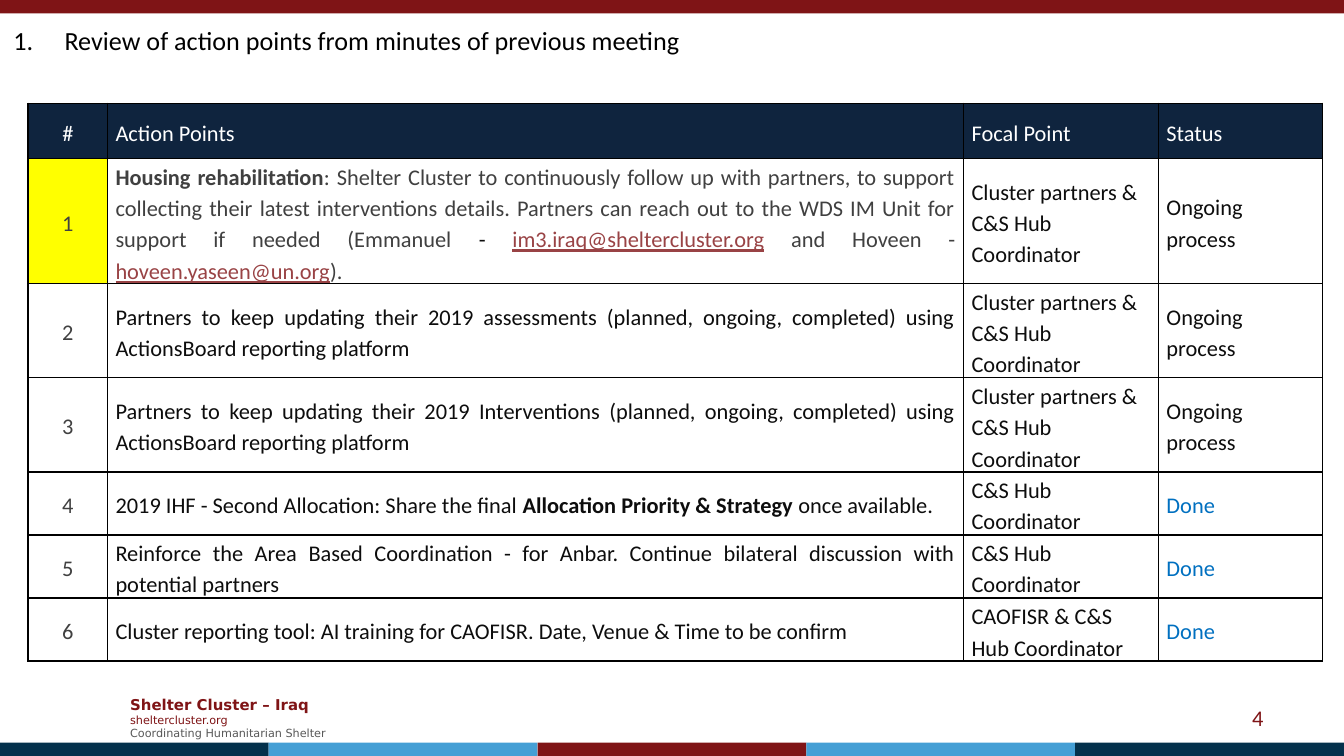
from typing import NamedTuple

from lxml import etree
from pptx import Presentation
from pptx.dml.color import RGBColor
from pptx.enum.shapes import MSO_SHAPE
from pptx.enum.text import MSO_ANCHOR, PP_ALIGN
from pptx.oxml.ns import qn
from pptx.util import Inches, Pt

RECT = MSO_SHAPE.RECTANGLE
MIDDLE = MSO_ANCHOR.MIDDLE
LEFT, CENTER, RIGHT, JUSTIFY = PP_ALIGN.LEFT, PP_ALIGN.CENTER, PP_ALIGN.RIGHT, PP_ALIGN.JUSTIFY

W = 10
H = W * 9 / 16
BAND_H = 0.1
BODY, SANS = "Calibri", "DejaVu Sans"
COLORS = {
    "red": "7F1416", "navy": "04314C", "sky": "459FD5", "header": "0F243E",
    "yellow": "FFFF00", "link": "994345", "done": "0070C0", "white": "FFFFFF",
    "black": "000000", "ink": "0D0D0D", "gray": "404040", "tagline": "595959",
}
COLUMN_WIDTHS = [0.59, 6.37, 1.45, 1.22]
ROW_HEIGHTS = [0.41, 0.93, 0.7, 0.7, 0.47, 0.47, 0.47]


class Span(NamedTuple):
    text: str
    color: str = "ink"
    bold: bool = False
    underline: bool = False


class Action(NamedTuple):
    points: list[Span]
    focal: str
    status: Span


PARTNERS = "Cluster partners & C&S Hub Coordinator"
HUB = "C&S Hub Coordinator"
ONGOING = Span("Ongoing process")
DONE = Span("Done", "done")
UPDATE = ("Partners to keep updating their 2019 {} (planned, ongoing, completed) "
          "using ActionsBoard reporting platform")

ACTIONS = [
    Action([
        Span("Housing rehabilitation", "gray", bold=True),
        Span(": Shelter Cluster to continuously follow up with partners, to support "
             "collecting their latest interventions details. Partners can reach out to "
             "the WDS IM Unit for support if needed (Emmanuel ", "gray"),
        Span("- "),
        Span("im3.iraq@sheltercluster.org", "link", underline=True),
        Span(" and Hoveen - ", "gray"),
        Span("hoveen.yaseen@un.org", "link", underline=True),
        Span(").", "gray"),
    ], PARTNERS, ONGOING),
    Action([Span(UPDATE.format("assessments"))], PARTNERS, ONGOING),
    Action([Span(UPDATE.format("Interventions"))], PARTNERS, ONGOING),
    Action([
        Span("2019 IHF - Second Allocation: Share the final "),
        Span("Allocation Priority & Strategy", bold=True),
        Span(" once available."),
    ], HUB, DONE),
    Action([Span("Reinforce the Area Based Coordination - for Anbar. Continue bilateral "
                 "discussion with potential partners")], HUB, DONE),
    Action([Span("Cluster reporting tool: AI training for CAOFISR. Date, Venue & Time "
                 "to be confirm")], "CAOFISR & C&S Hub Coordinator", DONE),
]


def rgb(name: str) -> RGBColor:
    return RGBColor.from_string(COLORS[name])


def add_spans(p, spans: list[Span], size: float, font: str = BODY) -> None:
    for span in spans:
        r = p.add_run()
        r.text = span.text
        r.font.name, r.font.size = font, Pt(size)
        r.font.bold, r.font.underline = span.bold, span.underline
        r.font.color.rgb = rgb(span.color)


def add_band(slide, x: float, y: float, w: float, color: str) -> None:
    sp = slide.shapes.add_shape(RECT, Inches(x), Inches(y), Inches(w), Inches(BAND_H))
    sp.shadow.inherit = False
    sp.fill.solid()
    sp.fill.fore_color.rgb = rgb(color)
    sp.line.fill.background()


def add_text_frame(slide, x: float, y: float, w: float, h: float):
    tf = slide.shapes.add_textbox(Inches(x), Inches(y), Inches(w), Inches(h)).text_frame
    tf.word_wrap = True
    tf.vertical_anchor = MIDDLE
    return tf


def number_paragraph(p, indent: float) -> None:
    """Give the paragraph an automatic number with a hanging indent."""
    pPr = p._p.get_or_add_pPr()
    pPr.set("marL", str(Inches(indent)))
    pPr.set("indent", str(-Inches(indent)))
    etree.SubElement(pPr, qn("a:buFont"), typeface="+mj-lt")
    etree.SubElement(pPr, qn("a:buAutoNum"), type="arabicPeriod")


def add_borders(cell) -> None:
    tcPr = cell._tc.get_or_add_tcPr()
    for i, side in enumerate(("lnL", "lnR", "lnT", "lnB")):
        ln = etree.Element(qn(f"a:{side}"), w=str(Pt(1)))
        fill = etree.SubElement(ln, qn("a:solidFill"))
        etree.SubElement(fill, qn("a:srgbClr"), val=COLORS["black"])
        tcPr.insert(i, ln)


def fill_cell(cell, spans: list[Span], align, fill: str | None = None) -> None:
    cell.vertical_anchor = MIDDLE
    cell.margin_left = cell.margin_right = Inches(0.06)
    cell.margin_top, cell.margin_bottom = Inches(0.01), 0
    if fill:
        cell.fill.solid()
        cell.fill.fore_color.rgb = rgb(fill)
    else:
        cell.fill.background()
    add_borders(cell)
    p = cell.text_frame.paragraphs[0]
    p.alignment, p.line_spacing = align, 1.15
    add_spans(p, spans, 12)


def add_action_table(slide) -> None:
    frame = slide.shapes.add_table(
        len(ROW_HEIGHTS), len(COLUMN_WIDTHS), Inches(0.21), Inches(0.77),
        Inches(sum(COLUMN_WIDTHS)), Inches(sum(ROW_HEIGHTS)))
    table = frame.table
    table.first_row = table.horz_banding = False
    for column, width in zip(table.columns, COLUMN_WIDTHS):
        column.width = Inches(width)
    for row, height in zip(table.rows, ROW_HEIGHTS):
        row.height = Inches(height)

    for col, heading in enumerate(("#", "Action Points", "Focal Point", "Status")):
        fill_cell(table.cell(0, col), [Span(heading, "white")],
                  JUSTIFY if col else CENTER, "header")
    for n, action in enumerate(ACTIONS, 1):
        fill_cell(table.cell(n, 0), [Span(str(n), "gray")], CENTER,
                  "yellow" if n == 1 else None)
        fill_cell(table.cell(n, 1), action.points, JUSTIFY)
        fill_cell(table.cell(n, 2), [Span(action.focal)], LEFT)
        fill_cell(table.cell(n, 3), [action.status], JUSTIFY)


def add_footer(slide) -> None:
    tf = add_text_frame(slide, 0.87, 5.12, 1.73, 0.44)
    lines = [
        (Span("Shelter Cluster – Iraq", "red", bold=True), 8),
        (Span("sheltercluster.org", "red"), 6),
        (Span("Coordinating Humanitarian Shelter", "tagline"), 6),
    ]
    for i, (span, size) in enumerate(lines):
        p = tf.add_paragraph() if i else tf.paragraphs[0]
        add_spans(p, [span], size, SANS)

    p = add_text_frame(slide, 7.17, 5.19, 2.33, 0.3).paragraphs[0]
    p.alignment = RIGHT
    add_spans(p, [Span("4", "red")], 12)


def add_title(slide) -> None:
    title = slide.shapes.title
    title.left, title.top = 0, Inches(0.13)
    title.width, title.height = Inches(W), Inches(0.33)
    tf = title.text_frame
    tf.vertical_anchor = MIDDLE
    p = tf.paragraphs[0]
    p.alignment = LEFT
    number_paragraph(p, 0.38)
    add_spans(p, [Span("Review of action points from minutes of previous meeting", "black")], 14)


def main() -> None:
    prs = Presentation()
    prs.slide_width, prs.slide_height = Inches(W), Inches(H)
    slide = prs.slides.add_slide(prs.slide_layouts[5])

    add_band(slide, 0, 0, W, "red")
    bands = ("navy", "sky", "red", "sky", "navy")
    band_w = W / len(bands)
    for i, color in enumerate(bands):
        add_band(slide, i * band_w, H - BAND_H, band_w, color)
    add_footer(slide)
    add_title(slide)
    add_action_table(slide)
    prs.save("out.pptx")


if __name__ == "__main__":
    main()
